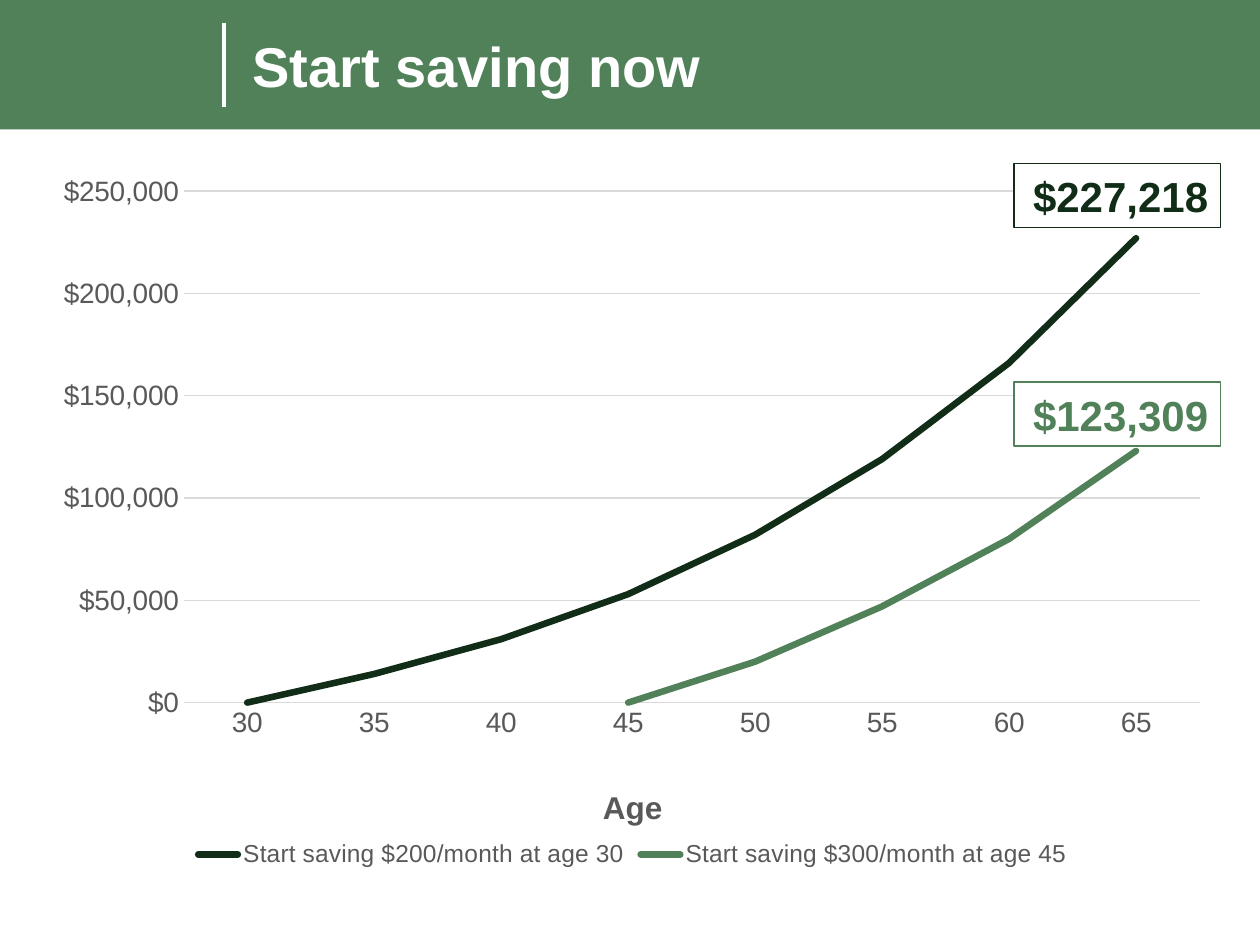
from collections import namedtuple

from lxml.etree import SubElement
from pptx import Presentation
from pptx.chart.data import CategoryChartData
from pptx.dml.color import RGBColor
from pptx.enum.chart import XL_CHART_TYPE as ChartType
from pptx.enum.chart import XL_LEGEND_POSITION as LegendPosition
from pptx.enum.chart import XL_TICK_MARK as TickMark
from pptx.enum.shapes import MSO_CONNECTOR as Connector
from pptx.enum.shapes import MSO_SHAPE as Shape
from pptx.enum.text import MSO_ANCHOR as Anchor
from pptx.enum.text import PP_ALIGN as Align
from pptx.oxml import parse_xml
from pptx.oxml.ns import nsdecls, qn
from pptx.util import Pt

Box = namedtuple("Box", "left top width height")

COLORS = {
    "white": "FFFFFF",
    "early": "112D18",
    "late": "518159",
    "text": "595959",
    "grid": "D9D9D9",
}
FONT = "Arial"
AGES = range(30, 70, 5)
SERIES = [
    ("Start saving $200/month at age 30", "early",
     [0, 14000, 31000, 53000, 82000, 119000, 166000, 227000]),
    ("Start saving $300/month at age 45", "late",
     [None, None, None, 0, 20000, 47000, 80000, 123000]),
]


def color(name):
    return RGBColor.from_string(COLORS[name])


def points(box):
    return [Pt(value) for value in box]


def style_font(font, size, color_name, bold=False):
    font.name = FONT
    font.size = Pt(size)
    font.bold = bold
    font.color.rgb = color(color_name)


def style_line(line, color_name, width):
    line.color.rgb = color(color_name)
    line.width = Pt(width)


def add_rectangle(page, box, fill):
    rectangle = page.shapes.add_shape(Shape.RECTANGLE, *points(box))
    rectangle.shadow.inherit = False
    rectangle.fill.solid()
    rectangle.fill.fore_color.rgb = color(fill)
    rectangle.line.fill.background()
    return rectangle


def add_header(page, box, text):
    add_rectangle(page, box, "late")
    rule_left = box.left + 128
    rule = page.shapes.add_connector(
        Connector.STRAIGHT, Pt(rule_left), Pt(box.top + 13),
        Pt(rule_left), Pt(box.top + 61))
    style_line(rule.line, "white", 2.25)
    SubElement(rule._element.spPr, qn("a:effectLst"))

    title = page.shapes.title
    page.shapes._spTree.append(title._element)  # in front of the band
    title.left, title.top, title.width, title.height = points(
        Box(rule_left + 9, box.top + 14.5, 562, 47.5))
    frame = title.text_frame
    frame.word_wrap = True
    frame.vertical_anchor = Anchor.MIDDLE
    frame.margin_left = frame.margin_right = Pt(7.2)
    frame.margin_top, frame.margin_bottom = Pt(5.8), Pt(3.6)
    para = frame.paragraphs[0]
    para.alignment = Align.LEFT
    para.line_spacing = 0.9
    span = para.add_run()
    span.text = text
    style_font(span.font, 32, "white", bold=True)


def manual_layout(left, top, width=None, height=None, inner=False):
    """Return a c:layout element holding fractions of the chart's box."""
    target = '<c:layoutTarget val="inner"/>' if inner else ""
    sizes = "" if width is None else f'<c:w val="{width}"/><c:h val="{height}"/>'
    return parse_xml(
        f'<c:layout {nsdecls("c")}><c:manualLayout>{target}'
        '<c:xMode val="edge"/><c:yMode val="edge"/>'
        f'<c:x val="{left}"/><c:y val="{top}"/>{sizes}'
        '</c:manualLayout></c:layout>')


def set_layout(parent, position, layout):
    for old in parent.findall(qn("c:layout")):
        parent.remove(old)
    parent.insert(position, layout)


def style_axes(chart):
    ages, savings = chart.category_axis, chart.value_axis
    for axis in (ages, savings):
        axis.major_tick_mark = axis.minor_tick_mark = TickMark.NONE
        style_font(axis.tick_labels.font, 16, "text")
    ages.has_major_gridlines = False
    style_line(ages.format.line, "grid", 0.75)
    span = ages.axis_title.text_frame.paragraphs[0].add_run()
    span.text = "Age"
    style_font(span.font, 18, "text", bold=True)
    set_layout(ages.axis_title._element, 1, manual_layout(0.47, 0.87))

    savings.minimum_scale, savings.maximum_scale = 0, 250000
    savings.major_unit = 50000
    savings.tick_labels.number_format = '"$"#,##0'
    savings.tick_labels.number_format_is_linked = False
    savings.format.line.fill.background()
    style_line(savings.major_gridlines.format.line, "grid", 0.75)


def add_savings_chart(page, box):
    data = CategoryChartData()
    data.categories = [str(age) for age in AGES]
    for name, _, values in SERIES:
        data.add_series(name, values)
    chart = page.shapes.add_chart(ChartType.LINE, *points(box), data).chart
    chart.has_title = False
    chart.font.name = FONT
    chart.font.size = Pt(10)
    chart.has_legend = True
    chart.legend.position = LegendPosition.BOTTOM
    chart.legend.include_in_layout = False
    style_font(chart.legend.font, 14, "text")
    style_axes(chart)

    plot = chart.plots[0]
    plot.vary_by_categories = False
    for series, (_, color_name, _) in zip(plot.series, SERIES):
        series.smooth = False
        style_line(series.format.line, color_name, 3.75)
        series.format.line._get_or_add_ln().set("cap", "rnd")
    plot_area = chart._chartSpace.chart.plotArea
    set_layout(plot_area, 0, manual_layout(0.12, 0.04, 0.86, 0.72, inner=True))


def add_callout(page, box, text, color_name):
    callout = add_rectangle(page, box, "white")
    style_line(callout.line, color_name, 1)
    frame = callout.text_frame
    frame.word_wrap = True
    frame.vertical_anchor = Anchor.MIDDLE
    para = frame.paragraphs[0]
    para.alignment = Align.RIGHT
    span = para.add_run()
    span.text = text
    style_font(span.font, 24, color_name, bold=True)


def main():
    deck = Presentation()
    deck.slide_width, deck.slide_height = Pt(720), Pt(540)
    page = deck.slides.add_slide(deck.slide_layouts[5])
    add_header(page, Box(0, 0, 720, 74), "Start saving now")
    add_savings_chart(page, Box(24, 93, 675, 406))
    add_callout(page, Box(579.5, 93.5, 118, 36.5), "$227,218", "early")
    add_callout(page, Box(579.5, 218.5, 118, 36.5), "$123,309", "late")
    deck.save("out.pptx")


if __name__ == "__main__":
    main()
